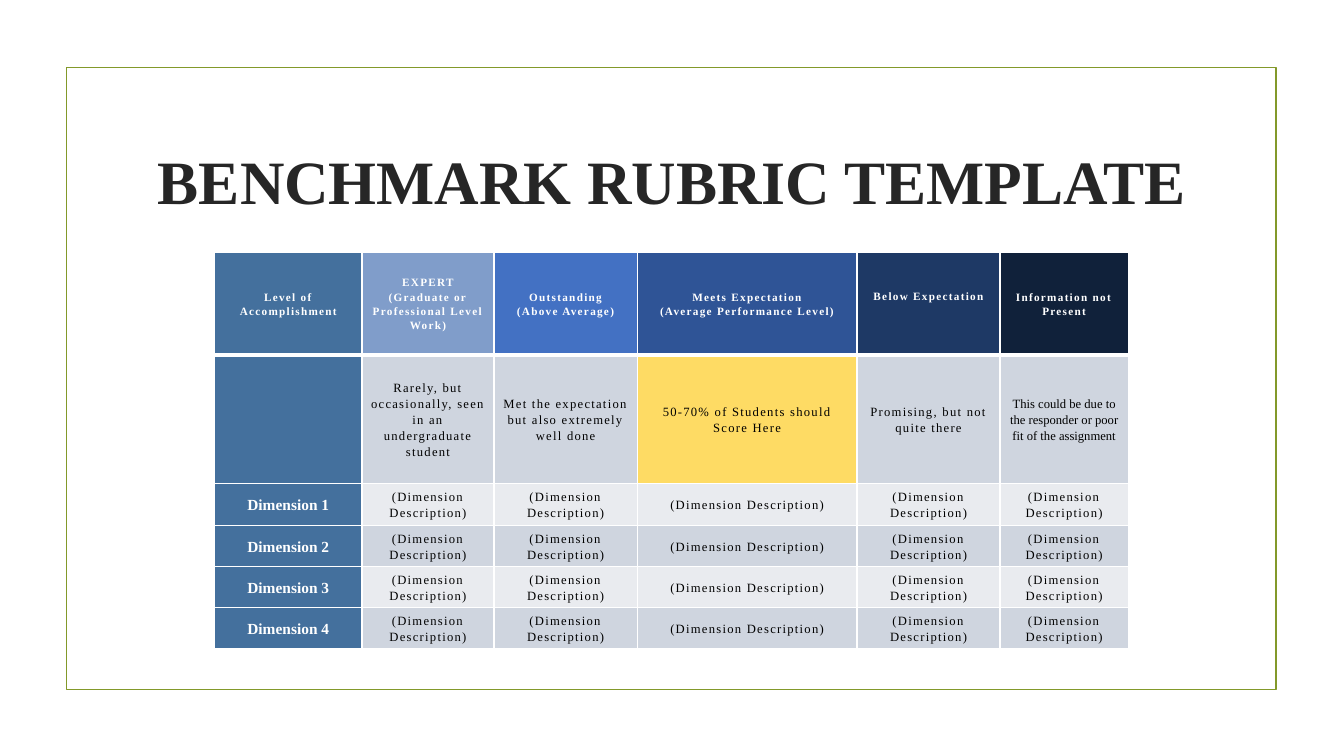
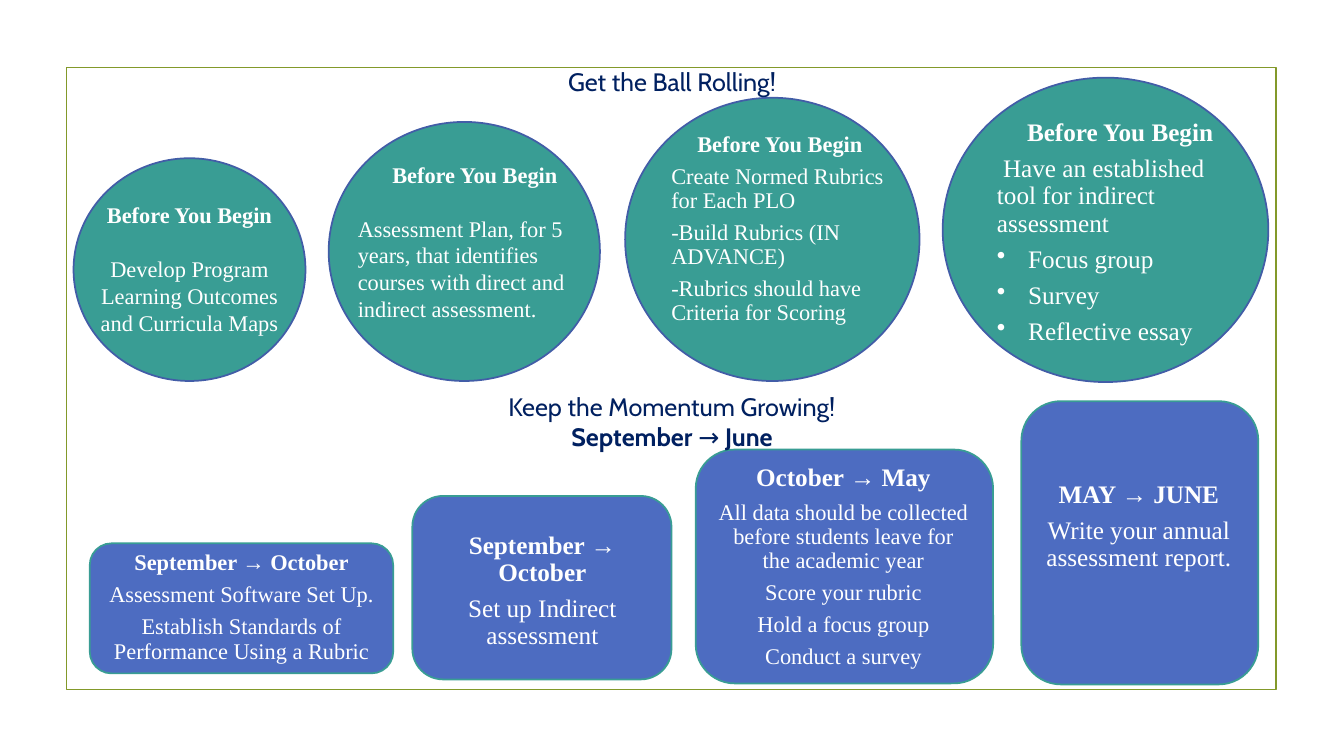
import pptx
import pptx.dml.color
import pptx.enum.shapes
import pptx.enum.text
import pptx.oxml
import pptx.oxml.ns
import pptx.util
from dataclasses import dataclass

Inches = pptx.util.Inches
Pt = pptx.util.Pt
RGBColor = pptx.dml.color.RGBColor
SHAPE = pptx.enum.shapes.MSO_SHAPE
ALIGN = pptx.enum.text.PP_ALIGN
ANCHOR = pptx.enum.text.MSO_ANCHOR

# Colours and fonts
WHITE = RGBColor(0xFF, 0xFF, 0xFF)
BLACK = RGBColor(0x00, 0x00, 0x00)
INK = RGBColor(0x26, 0x26, 0x26)
NAVY = RGBColor(0x00, 0x20, 0x60)
OLIVE = RGBColor(0x83, 0x99, 0x2A)
TEAL = RGBColor(0x39, 0x9D, 0x94)
BLUE = RGBColor(0x4D, 0x6C, 0xC1)
RIM = RGBColor(0x42, 0x5D, 0xA7)
STEEL = RGBColor(0x44, 0x70, 0x9D)
GOLD = RGBColor(0xFE, 0xDB, 0x64)
DARK = RGBColor(0xCF, 0xD5, 0xDF)
LIGHT = RGBColor(0xE9, 0xEB, 0xEF)
SERIF = "Times New Roman"
SANS = "Cabin"


@dataclass
class Para:
    """One paragraph; runs are (text, bold) pairs."""
    runs: list
    size: float
    color: RGBColor = WHITE
    font: str = SERIF
    align: ALIGN = ALIGN.CENTER
    line: float = 1.0
    before: float = 0
    after: float = 0
    track: float = 0
    indent: float = 0
    bullet: bool = False


# Text
def set_text(frame, paras):
    for i, para in enumerate(paras):
        p = frame.paragraphs[0] if i == 0 else frame.add_paragraph()
        props = p._p.get_or_add_pPr()
        if para.indent:
            props.set("marL", str(Inches(para.indent) if para.bullet else 0))
            sign = -1 if para.bullet else 1
            props.set("indent", str(sign * Inches(para.indent)))
        if para.bullet:
            mark = pptx.oxml.parse_xml(
                f'<a:buChar {pptx.oxml.ns.nsdecls("a")} char="•"/>')
            props.append(mark)
        p.alignment = para.align
        p.line_spacing = para.line
        p.space_before = Pt(para.before)
        p.space_after = Pt(para.after)
        for text, bold in para.runs:
            run = p.add_run()
            run.text = text
            font = run.font
            font.name, font.size, font.bold = para.font, Pt(para.size), bold
            font.color.rgb = para.color
            if para.track:
                run._r.get_or_add_rPr().set("spc", str(int(para.track * 100)))


def add_text(shapes, box, paras, anchor=ANCHOR.TOP, pads=(0.1, 0.05)):
    frame = shapes.add_textbox(*map(Inches, box)).text_frame
    frame.word_wrap = True
    frame.vertical_anchor = anchor
    frame.margin_left = frame.margin_right = Inches(pads[0])
    frame.margin_top = frame.margin_bottom = Inches(pads[1])
    set_text(frame, paras)


def tight(text, size, bold=False, **more):
    """Close lines with a gap of 35% of the text size below."""
    return Para([(text, bold)], size, line=0.9, after=size * 0.35, **more)


# Shapes
def add_form(shapes, kind, box, fill, line):
    form = shapes.add_shape(kind, *map(Inches, box))
    form.shadow.inherit = False
    if fill is None:
        form.fill.background()
    else:
        form.fill.solid()
        form.fill.fore_color.rgb = fill
    form.line.color.rgb = line
    form.line.width = Pt(1.25)


def add_card(slide, box, inner, paras):
    shapes = slide.shapes.add_group_shape().shapes
    add_form(shapes, SHAPE.ROUNDED_RECTANGLE, box, BLUE, TEAL)
    add_text(shapes, inner, paras, ANCHOR.MIDDLE, (0.07, 0.07))


def add_ball(slide, box, inner, paras):
    shapes = slide.shapes.add_group_shape().shapes
    add_form(shapes, SHAPE.OVAL, box, TEAL, RIM)
    add_text(shapes, inner, paras)


def new_slide(deck):
    slide = deck.slides.add_slide(deck.slide_layouts[6])
    add_form(slide.shapes, SHAPE.RECTANGLE, (0.66, 0.67, 12, 6.17), None, OLIVE)
    return slide


# Table
def set_edge(cell, side, width):
    cell._tc.get_or_add_tcPr().append(pptx.oxml.parse_xml(
        f'<a:ln{side} {pptx.oxml.ns.nsdecls("a")} w="{Pt(width)}">'
        f'<a:solidFill><a:srgbClr val="{WHITE}"/></a:solidFill></a:ln{side}>'))


def fill_cell(cell, fill, paras, top=1, base=1):
    for side, width in zip("LRTB", (1, 1, top, base)):
        set_edge(cell, side, width)
    cell.fill.solid()
    cell.fill.fore_color.rgb = fill
    cell.vertical_anchor = ANCHOR.MIDDLE
    cell.margin_left = cell.margin_right = Inches(0.07)
    cell.margin_top = cell.margin_bottom = 0
    set_text(cell.text_frame, paras)


def cell_para(text, size=9, color=BLACK, bold=False, track=0.9):
    return Para([(text, bold)], size, color, line=1.15, track=track)


HEADS = [
    (STEEL, ["Level of Accomplishment"]),
    (RGBColor(0x80, 0x9D, 0xCA),
     ["EXPERT", "(Graduate or Professional Level Work)"]),
    (RGBColor(0x43, 0x71, 0xC3), ["Outstanding", "(Above Average)"]),
    (RGBColor(0x2F, 0x54, 0x96),
     ["Meets Expectation", "(Average Performance Level)"]),
    (RGBColor(0x1E, 0x39, 0x65), ["Below Expectation"]),
    (RGBColor(0x10, 0x21, 0x3A), ["Information not Present"]),
]
NOTES = [
    "Rarely, but occasionally, seen in an undergraduate student",
    "Met the expectation but also extremely well done",
    "50-70% of Students should Score Here",
    "Promising, but not quite there",
    "This could be due to the responder or poor fit of the assignment",
]
WIDTHS = [1.46, 1.31, 1.42, 2.18, 1.42, 1.27]
HEIGHTS = [1.02, 1.28] + [0.41] * 4


def add_rubric(slide):
    table = slide.shapes.add_table(
        len(HEIGHTS), len(WIDTHS), Inches(2.13), Inches(2.5),
        Inches(sum(WIDTHS)), Inches(sum(HEIGHTS))).table
    for col, width in zip(table.columns, WIDTHS):
        col.width = Inches(width)
    for row, height in zip(table.rows, HEIGHTS):
        row.height = Inches(height)

    # Levels
    for c, (fill, lines) in enumerate(HEADS):
        fill_cell(table.cell(0, c), fill,
                  [cell_para(t, 8, WHITE, True) for t in lines], base=3)
    table.cell(0, 4).margin_bottom = Inches(0.15)

    # Notes on each level
    fill_cell(table.cell(1, 0), STEEL, [], top=3)
    for c, note in enumerate(NOTES, 1):
        track = 0 if c == len(NOTES) else 0.9
        fill_cell(table.cell(1, c), GOLD if c == 3 else DARK,
                  [cell_para(note, track=track)], top=3)

    # Dimensions
    for r in range(2, len(HEIGHTS)):
        fill_cell(table.cell(r, 0), STEEL,
                  [cell_para(f"Dimension {r - 1}", 11, WHITE, True, 0)])
        for c in range(1, len(WIDTHS)):
            fill_cell(table.cell(r, c), DARK if r % 2 else LIGHT,
                      [cell_para("(Dimension Description)")])


def rubric_slide(deck):
    slide = new_slide(deck)
    add_text(slide.shapes, (1.42, 1.07, 10.5, 1.43),
             [Para([("BENCHMARK RUBRIC TEMPLATE", True)], 44, INK)],
             ANCHOR.MIDDLE)
    add_rubric(slide)


def plan_slide(deck):
    slide = new_slide(deck)
    left = ALIGN.LEFT
    begin = "Before You Begin"

    # Cards for the year
    add_card(slide, (0.89, 5.39, 3.01, 1.29), (1, 5.45, 2.79, 1.16), [
        tight("September → October", 16, True),
        tight("Assessment Software Set Up.", 16),
        tight("Establish Standards of Performance Using a Rubric", 16)])
    add_card(slide, (4.09, 4.92, 2.57, 1.82), (4.23, 5.13, 2.3, 1.47), [
        tight("September → October", 18, True),
        tight("Set up Indirect assessment", 18)])
    add_card(slide, (6.9, 4.46, 2.95, 2.32), (7.05, 4.59, 2.63, 2.07), [
        tight("October → May", 18, True),
        tight("All data should be collected before students leave for "
              "the academic year", 16),
        tight("Score your rubric", 16),
        tight("Hold a focus group", 16),
        tight("Conduct a survey", 16)])
    add_card(slide, (10.13, 3.98, 2.35, 2.81), (10.22, 4.55, 2.15, 1.36), [
        tight("MAY → JUNE", 18, True),
        tight("Write your annual assessment report.", 18)])

    # Headings
    add_text(slide.shapes, (0, 0.61, 13.33, 0.4),
             [Para([("Get the Ball Rolling!", False)], 18, NAVY, SANS)])
    add_text(slide.shapes, (0, 3.83, 13.33, 0.71), [
        Para([("Keep the Momentum Growing!", False)], 18, NAVY, SANS),
        Para([("September ", True), ("→", False), (" June", True)],
             18, NAVY, SANS)])

    # Balls for the first steps
    add_ball(slide, (0.73, 1.57, 2.3, 2.21), (0.81, 1.95, 2.14, 1.78), [
        Para([(begin, True)], 16),
        Para([("Develop Program Learning Outcomes and Curricula Maps", False)],
             16, before=19)])
    add_ball(slide, (3.26, 1.21, 2.69, 2.57), (3.45, 1.55, 2.52, 1.99), [
        Para([(begin, True)], 16),
        Para([("Assessment Plan, for 5 years, that identifies courses with "
               "direct and indirect assessment.", False)],
             16, align=left, before=19)])
    add_ball(slide, (6.2, 0.97, 2.92, 2.81), (6.56, 1.27, 2.35, 2.08), [
        tight(begin, 16, True),
        tight("Create Normed Rubrics for Each PLO", 16, align=left),
        tight("-Build Rubrics (IN ADVANCE)", 16, align=left),
        tight("-Rubrics should have Criteria for Scoring", 16, align=left)])
    tools = ["Focus group", "Survey", "Reflective essay"]
    add_ball(slide, (9.35, 0.77, 3.23, 3.02), (9.79, 1.14, 2.64, 2.43), [
        tight(begin, 18, True),
        tight("Have an established tool for indirect assessment", 18,
              align=left, indent=0.06),
        *[tight(tool, 18, align=left, indent=0.31, bullet=True)
          for tool in tools]])


def main():
    deck = pptx.Presentation()
    deck.slide_width, deck.slide_height = Inches(13.33), Inches(7.5)
    rubric_slide(deck)
    plan_slide(deck)
    deck.save("out.pptx")


if __name__ == "__main__":
    main()
